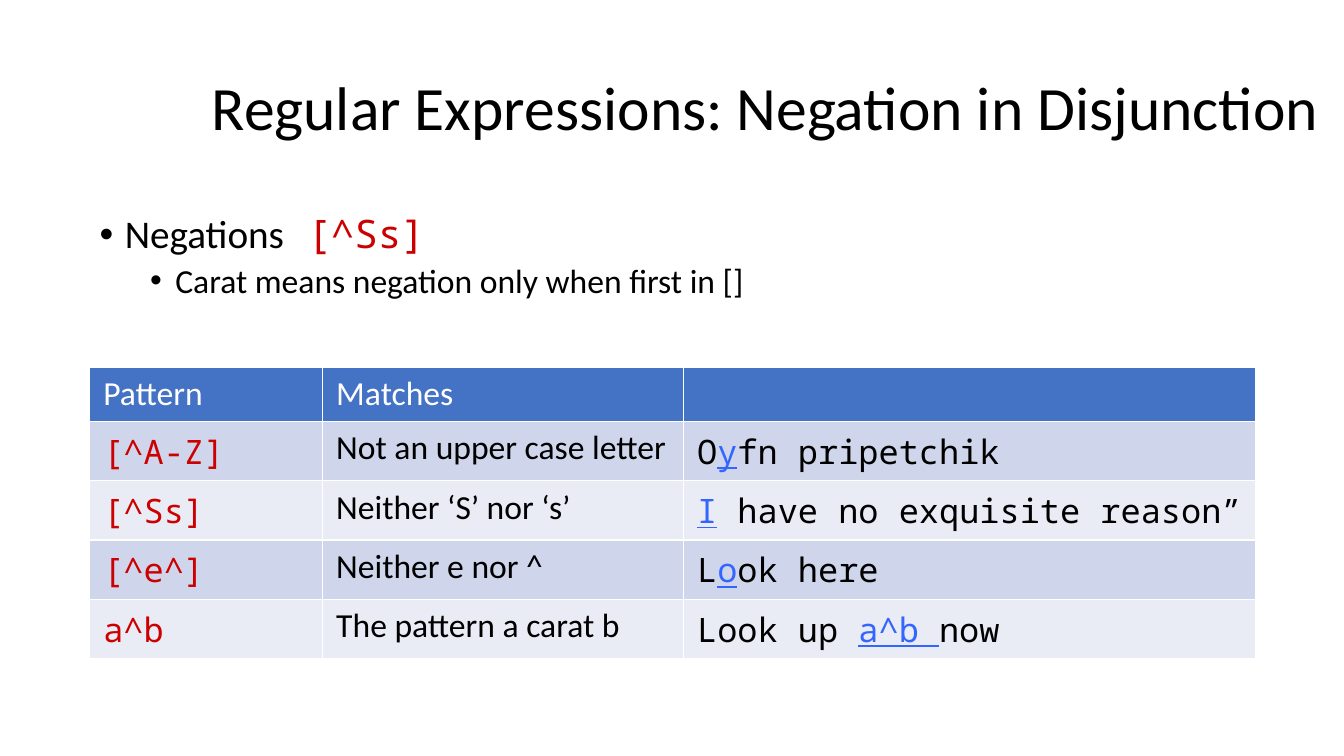
"""Build a slide on negation in regular expression disjunctions."""
from lxml import etree
from pptx import Presentation
from pptx.dml.color import RGBColor
from pptx.enum import text
from pptx.oxml import ns
from pptx.util import Pt

SANS, MONO = "Calibri", "Noto Sans Mono"
BLACK = RGBColor(0x00, 0x00, 0x00)
WHITE = RGBColor(0xFF, 0xFF, 0xFF)
RED = RGBColor(0xCC, 0x00, 0x00)
LINK_BLUE = RGBColor(0x33, 0x66, 0xFF)
HEADER_FILL = RGBColor(0x44, 0x72, 0xC4)
BAND_FILLS = RGBColor(0xCF, 0xD5, 0xEA), RGBColor(0xE9, 0xEB, 0xF5)

HEADERS = "Pattern", "Matches", ""
COLUMN_WIDTHS = 166.4, 257.8, 408.2
ROW_HEIGHT = 38.9
ROWS = [
    ("[^A-Z]", "Not an upper case letter", ("O", "y", "fn pripetchik")),
    ("[^Ss]", "Neither ‘S’ nor ‘s’", ("", "I", " have no exquisite reason”")),
    ("[^e^]", "Neither e nor ^", ("L", "o", "ok here")),
    ("a^b", "The pattern a carat b", ("Look up ", "a^b ", "now")),
]


def set_font(font, name, size, color):
    font.name, font.size, font.bold = name, Pt(size), False
    font.color.rgb = color


def add_run(p, content, name=None, color=None, underline=None):
    r = p.add_run()
    r.text = content
    r.font.name = name
    r.font.underline = underline
    if color is not None:
        r.font.color.rgb = color


def place(sp, left, top, width, height):
    sp.left, sp.top, sp.width, sp.height = map(Pt, (left, top, width, height))
    sp.text_frame.word_wrap = True
    sp.text_frame.auto_size = text.MSO_AUTO_SIZE.NONE


def fill_title(sp, content):
    place(sp, 144, 40.3, 816, 77.8)
    sp.text_frame.vertical_anchor = text.MSO_ANCHOR.MIDDLE
    p = sp.text_frame.paragraphs[0]
    p.text, p.alignment, p.line_spacing = content, text.PP_ALIGN.LEFT, 0.9
    set_font(p.font, SANS, 44, BLACK)


def format_bullet(p, level, indent, size, before):
    p.level, p.line_spacing, p.space_before = level, 0.9, Pt(before)
    set_font(p.font, SANS, size, BLACK)
    ppr = p._p.get_or_add_pPr()
    ppr.set("marL", str(Pt(indent)))
    ppr.set("indent", str(-Pt(18)))
    bullet_font = etree.Element(ns.qn("a:buFont"), typeface="Arial")
    bullet = etree.Element(ns.qn("a:buChar"), char="•")
    ppr.find(ns.qn("a:defRPr")).addprevious(bullet_font)
    bullet_font.addnext(bullet)


def fill_body(sp):
    place(sp, 64, 149.8, 800, 432)
    tf = sp.text_frame
    p = tf.paragraphs[0]
    add_run(p, "Negations")
    add_run(p, " [^Ss]", MONO, RED)
    format_bullet(p, 0, 18, 28, 10)
    p = tf.add_paragraph()
    add_run(p, "Carat means negation only when first in []")
    format_bullet(p, 1, 54, 24, 5)


def fill_cell(cell, parts, name, color, background):
    """Write plain and matched parts in turn; every second part is a match."""
    cell.margin_left = cell.margin_right = Pt(9.6)
    cell.margin_top = cell.margin_bottom = Pt(4.8)
    cell.fill.solid()
    cell.fill.fore_color.rgb = background
    p = cell.text_frame.paragraphs[0]
    set_font(p.font, name, 24, color)
    for i, part in enumerate(parts):
        if part:
            matched = i % 2 == 1
            add_run(p, part, name, LINK_BLUE if matched else color, matched)
            p.runs[-1].font.size = Pt(24)
            p.runs[-1].font.bold = False


def add_pattern_table(s):
    count = len(ROWS) + 1
    table = s.shapes.add_table(count, len(HEADERS), Pt(64.2), Pt(262.1),
                               Pt(sum(COLUMN_WIDTHS)), Pt(count * ROW_HEIGHT)).table
    for column, width in zip(table.columns, COLUMN_WIDTHS):
        column.width = Pt(width)
    for row in table.rows:
        row.height = Pt(ROW_HEIGHT)
    for j, header in enumerate(HEADERS):
        fill_cell(table.cell(0, j), [header], SANS, WHITE, HEADER_FILL)
    for i, (pattern, meaning, example) in enumerate(ROWS, 1):
        band = BAND_FILLS[(i - 1) % 2]
        fill_cell(table.cell(i, 0), [pattern], MONO, RED, band)
        fill_cell(table.cell(i, 1), [meaning], SANS, BLACK, band)
        fill_cell(table.cell(i, 2), example, MONO, BLACK, band)


def main():
    prs = Presentation()
    prs.slide_width, prs.slide_height = Pt(960), Pt(540)
    s = prs.slides.add_slide(prs.slide_layouts[1])
    fill_title(s.shapes.title, "Regular Expressions: Negation in Disjunction")
    fill_body(s.placeholders[1])
    add_pattern_table(s)
    prs.save("out.pptx")


if __name__ == "__main__":
    main()
